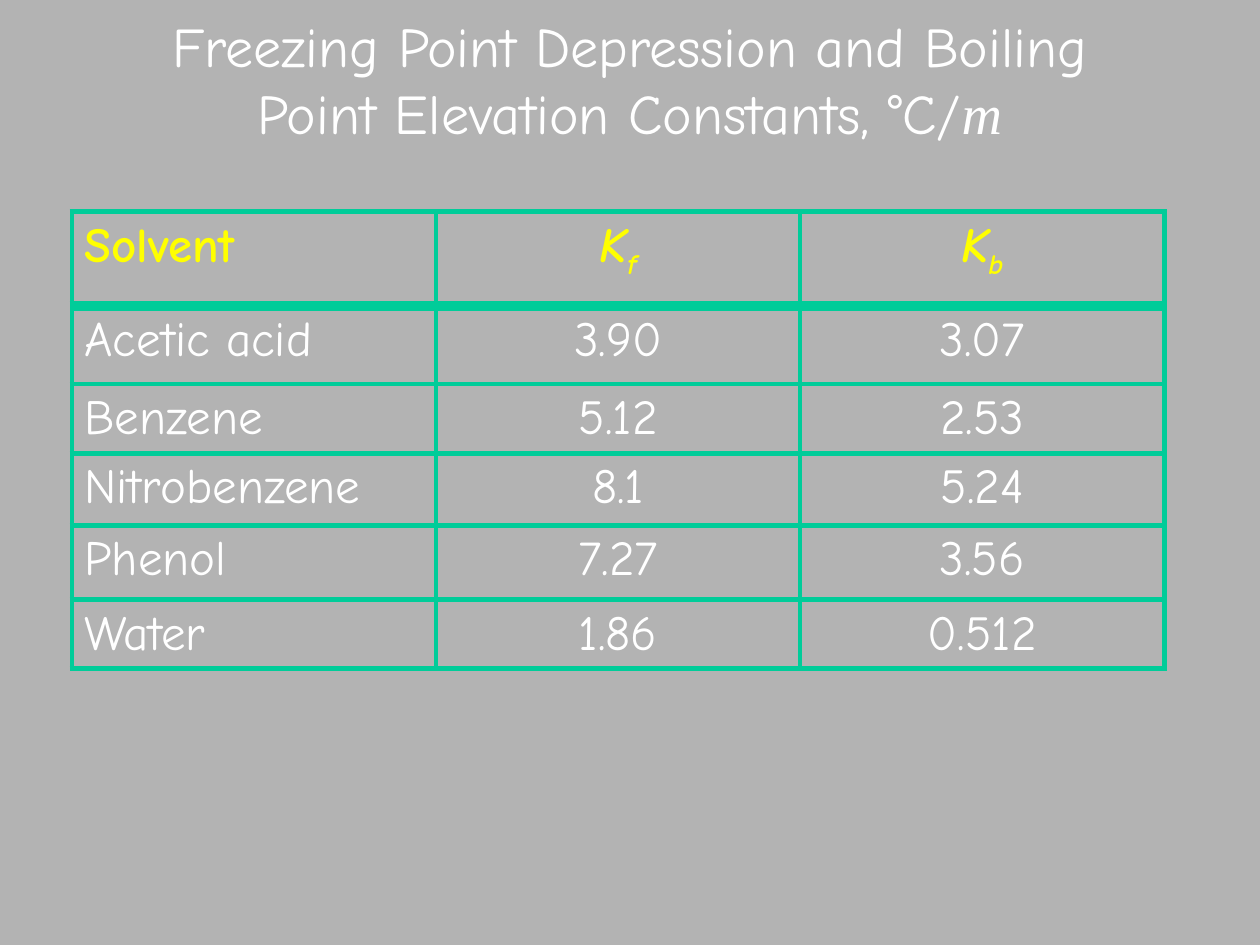
from lxml import etree
from pptx import Presentation
from pptx import util as u
from pptx.dml.color import RGBColor
from pptx.enum import text
from pptx.oxml import ns

COLORS = {"page": "B3B3B3", "text": "FFFFFF", "head": "FFFF00", "grid": "00CC99"}


def add_span(para, wording, size=28, color="text", font="Comic Neue",
             bold=False, italic=False, baseline=0):
    span = para.add_run()
    span.text = wording
    span.font.name = font
    span.font.size = u.Pt(size)
    span.font.bold = bold
    span.font.italic = italic
    span.font.color.rgb = RGBColor.from_string(COLORS[color])
    if baseline:
        span.font._element.set("baseline", str(baseline * 1000))


def add_border(cell, side, width):
    line = etree.SubElement(cell._tc.get_or_add_tcPr(), ns.qn("a:ln" + side),
                            w=str(u.Pt(width)))
    fill = etree.SubElement(line, ns.qn("a:solidFill"))
    etree.SubElement(fill, ns.qn("a:srgbClr"), val=COLORS["grid"])


deck = Presentation()
deck.slide_width, deck.slide_height = u.Cm(25.4), u.Cm(19.05)
page = deck.slides.add_slide(deck.slide_layouts[5])
page.background.fill.solid()
page.background.fill.fore_color.rgb = RGBColor.from_string(COLORS["page"])

# Title
title = page.shapes.title
title.left, title.top = u.Cm(1.9), u.Cm(0)
title.width, title.height = u.Cm(21.6), u.Cm(3.18)
frame = title.text_frame
frame.word_wrap = True
frame.auto_size = text.MSO_AUTO_SIZE.NONE
frame.vertical_anchor = text.MSO_ANCHOR.MIDDLE
para = frame.paragraphs[0]
para.alignment = text.PP_ALIGN.CENTER
add_span(para, "Freezing Point Depression and Boiling Point Elevation Constants, °C/",
         size=32)
add_span(para, "m", size=32, font="Times New Roman", italic=True)

# Table of constants; a header cell is a name and its subscript
rows = [
    [("Solvent", ""), ("K", "f"), ("K", "b")],
    ["Acetic acid", "3.90", "3.07"],
    ["Benzene", "5.12", "2.53"],
    ["Nitrobenzene", "8.1", "5.24"],
    ["Phenol", "7.27", "3.56"],
    ["Water", "1.86", "0.512"],
]
heights = [1.9, 1.57, 1.4, 1.45, 1.5, 1.22]
table = page.shapes.add_table(len(rows), 3, u.Cm(1.45), u.Cm(4.27),
                              u.Cm(22.02), u.Cm(sum(heights))).table
table.first_row = table.horz_banding = False
for column in table.columns:
    column.width = u.Cm(7.34)

for r, (values, height) in enumerate(zip(rows, heights)):
    table.rows[r].height = u.Cm(height)
    for c, value in enumerate(values):
        cell = table.cell(r, c)
        para = cell.text_frame.paragraphs[0]
        para.alignment = text.PP_ALIGN.CENTER if c else text.PP_ALIGN.LEFT
        before = etree.SubElement(para._p.get_or_add_pPr(), ns.qn("a:spcBef"))
        etree.SubElement(before, ns.qn("a:spcPct"), val="20000")
        if r == 0:
            name, subscript = value
            add_span(para, name, color="head", bold=True, italic=c > 0)
            if subscript:
                add_span(para, subscript, color="head", bold=True, italic=True,
                         baseline=-25)
        else:
            add_span(para, value)

        # The rule under the header is twice as thick
        widths = {"L": 3, "R": 3, "T": 6 if r == 1 else 3, "B": 6 if r == 0 else 3}
        for side, width in widths.items():
            add_border(cell, side, width)
        cell.fill.background()

deck.save("out.pptx")
